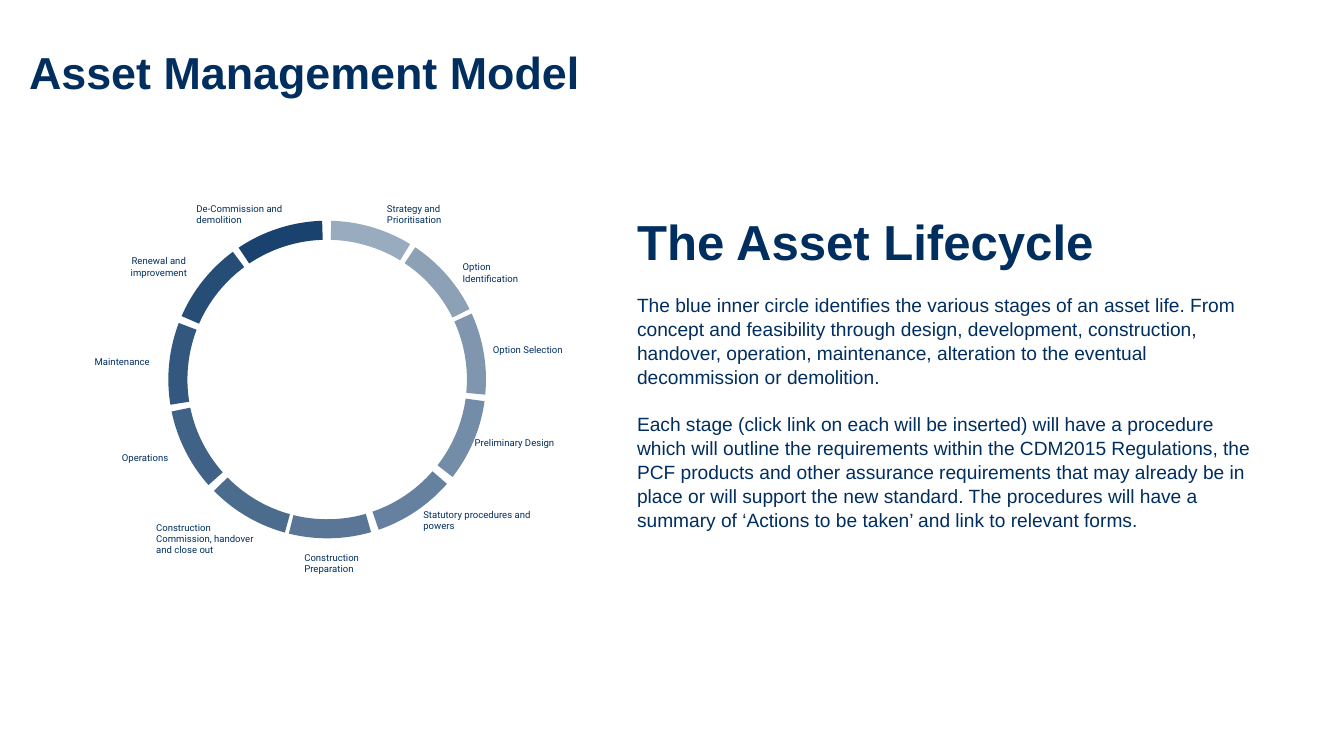
from lxml.etree import SubElement
from pptx import Presentation
from pptx.dml.color import RGBColor
from pptx.enum.shapes import MSO_SHAPE
from pptx.enum.text import MSO_ANCHOR, PP_ALIGN
from pptx.oxml.ns import qn
from pptx.util import Inches, Pt

NAVY = RGBColor(0x00, 0x2E, 0x5F)

prs = Presentation()
prs.slide_width, prs.slide_height = Inches(13.33), Inches(7.5)
s = prs.slides.add_slide(prs.slide_layouts[6])


def add_text(text, box, size, font="Arial", bold=False, align=PP_ALIGN.LEFT,
             anchor=MSO_ANCHOR.MIDDLE, spacing=None):
    tf = s.shapes.add_textbox(*[Inches(v) for v in box]).text_frame
    tf.word_wrap = True
    tf.vertical_anchor = anchor
    p = tf.paragraphs[0]
    p.alignment = align
    p.line_spacing = spacing
    r = p.add_run()
    r.text = text
    r.font.name, r.font.size, r.font.bold = font, Pt(size), bold
    r.font.color.rgb = NAVY
    return tf


add_text("Asset Management Model", (0.19, 0.23, 12.13, 1.03), 32, bold=True, spacing=0.9)

ARC_START, ARC_END = 160.12, 178.13
stages = [
    ("Strategy and Prioritisation", (3.74, 1.91, 1.1, 0.43), 4.6, ARC_START),
    ("Option Identification", (4.49, 2.49, 1.02, 0.43), 36.8, ARC_START),
    ("Option Selection", (4.79, 3.25, 0.9, 0.43), 68.6, ARC_START),
    ("Preliminary Design", (4.61, 4.18, 1.17, 0.43), 101, ARC_START),
    ("Statutory procedures and powers", (4.1, 4.87, 1.42, 0.58), 134.2, ARC_START),
    ("Construction Preparation", (2.92, 5.41, 1.03, 0.36), 167.1, ARC_START),
    ("Construction Commission, handover and close out", (1.45, 4.98, 1.29, 0.73),
     198.6, ARC_START),
    ("Operations", (1.11, 4.4, 1.01, 0.28), 231.5, ARC_START),
    ("Maintenance", (0.84, 3.45, 1.11, 0.28), 264, ARC_START),
    ("Renewal and improvement", (1.03, 2.43, 1.09, 0.43), 296.7, ARC_START),
    ("De-Commission and demolition", (1.85, 1.91, 1.23, 0.43), 331.3, 158.89),
]
for i, (label, box, angle, start) in enumerate(stages):
    sp = s.shapes.add_shape(MSO_SHAPE.BLOCK_ARC, Inches(1.67), Inches(2.19),
                            Inches(3.15), Inches(3.15))
    sp.rotation = angle
    for n, value in enumerate((start, ARC_END, 0.06)):
        sp.adjustments[n] = value
    sp.shadow.inherit = False
    sp.line.fill.background()
    sp.fill.solid()
    sp.fill.fore_color.rgb = NAVY
    color = sp.fill._xPr.find(qn("a:solidFill"))[0]
    SubElement(color, qn("a:alpha")).set("val", str((40 + 5 * i) * 1000))
    align = PP_ALIGN.CENTER if label.startswith("Renewal") else PP_ALIGN.LEFT
    add_text(label, box, 6.8, font="Roboto", align=align)

tf = add_text("The Asset Lifecycle", (6.22, 2.02, 6.45, 3.92), 35.1, bold=True,
              anchor=MSO_ANCHOR.TOP, spacing=1.04)
for text in (
    "The blue inner circle identifies the various stages of an asset life. From concept "
    "and feasibility through design, development, construction, handover, operation, "
    "maintenance, alteration to the eventual decommission or demolition.",
    "Each stage (click link on each will be inserted) will have a procedure which will "
    "outline the requirements within the CDM2015 Regulations, the PCF products and other "
    "assurance requirements that may already be in place or will support the new standard. "
    "The procedures will have a summary of ‘Actions to be taken’ and link to relevant forms.",
):
    p = tf.add_paragraph()
    p.line_spacing = 1.04
    p.space_before = Pt(16.4)
    r = p.add_run()
    r.text = text
    r.font.name, r.font.size = "Arial", Pt(13.7)
    r.font.color.rgb = NAVY

prs.save("out.pptx")
